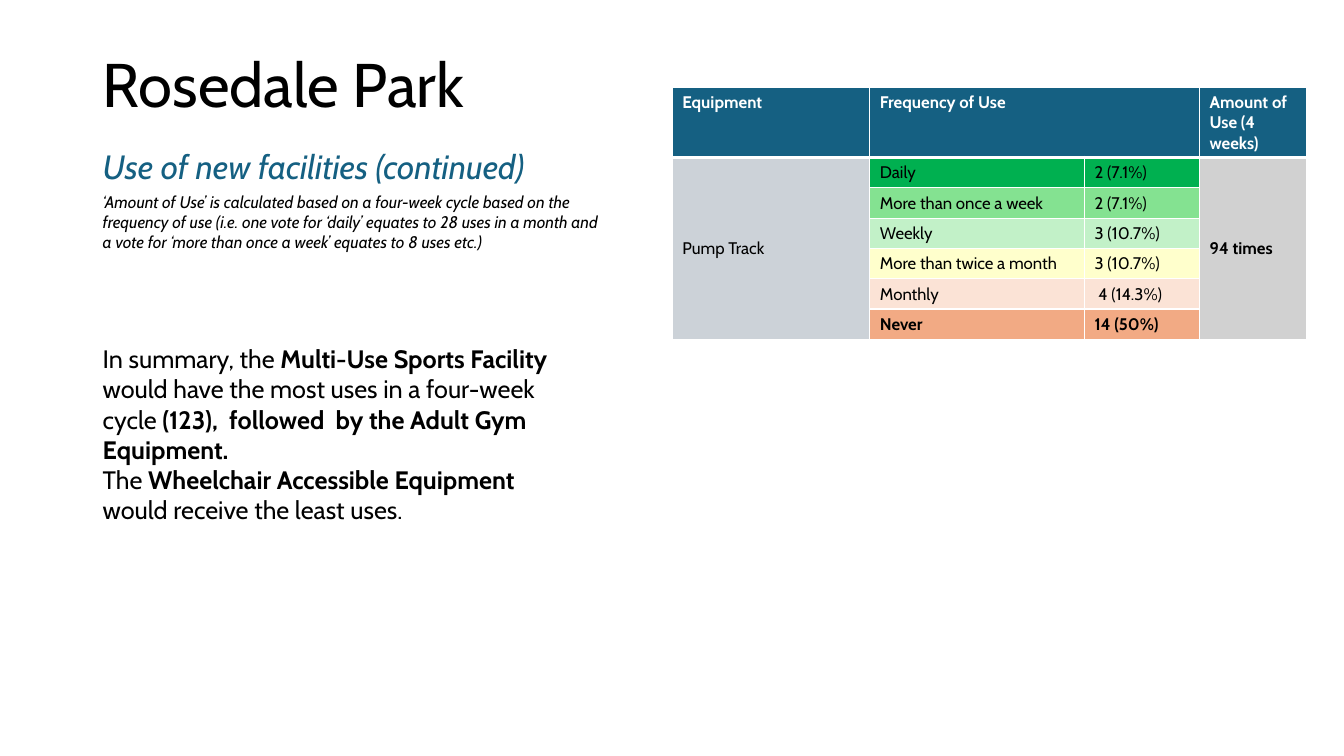
from lxml.etree import SubElement
from pptx import Presentation
from pptx.dml.color import RGBColor
from pptx.enum.text import MSO_ANCHOR
from pptx.oxml.ns import qn
from pptx.util import Cm, Pt

FONT = "Cabin"
BLACK = RGBColor(0x00, 0x00, 0x00)
WHITE = RGBColor(0xFF, 0xFF, 0xFF)
BLUE = RGBColor(0x15, 0x60, 0x82)
BLUE_GREY = RGBColor(0xCC, 0xD2, 0xD8)
GREY = RGBColor(0xD1, 0xD1, 0xD1)
GREEN = RGBColor(0x00, 0xB0, 0x50)
MID_GREEN = RGBColor(0x84, 0xE2, 0x91)
PALE_GREEN = RGBColor(0xC2, 0xF1, 0xC8)
YELLOW = RGBColor(0xFF, 0xFF, 0xCC)
PALE_ORANGE = RGBColor(0xFB, 0xE3, 0xD6)
ORANGE = RGBColor(0xF2, 0xAA, 0x84)

LEFT = 2.34
COLUMN_WIDTHS = (4.98, 5.41, 2.9, 2.69)
HEADER_HEIGHT = 1.78
ROW_HEIGHT = 0.76
HEADERS = ("Equipment", "Frequency of Use", "", "Amount of Use (4 weeks)")
FREQUENCIES = (
    ("Daily", "2 (7.1%)", GREEN),
    ("More than once a week", "2 (7.1%)", MID_GREEN),
    ("Weekly", "3 (10.7%)", PALE_GREEN),
    ("More than twice a month", "3 (10.7%)", YELLOW),
    ("Monthly", " 4 (14.3%)", PALE_ORANGE),
    ("Never", "14 (50%)", ORANGE),
)
SUMMARY = (
    (
        ("In summary, the ", False),
        ("Multi-Use Sports Facility ", True),
        ("would have the most uses in a four-week cycle ", False),
        ("(123),  followed  by the Adult Gym Equipment.", True),
    ),
    (
        ("The ", False),
        ("Wheelchair Accessible Equipment ", True),
        ("would receive the least uses.", False),
    ),
)


def style_paragraph(paragraph, size, color=BLACK, **emphasis):
    """Set the font of a whole paragraph."""
    font = paragraph.font
    font.name = FONT
    font.size = Pt(size)
    font.color.rgb = color
    for name, value in emphasis.items():
        setattr(font, name, value)


def add_text_frame(slide, top, width, height, anchor=MSO_ANCHOR.TOP):
    """Add a wrapping text box at the left margin and return its frame."""
    shape = slide.shapes.add_textbox(Cm(LEFT), Cm(top), Cm(width), Cm(height))
    shape.text_frame.word_wrap = True
    shape.text_frame.vertical_anchor = anchor
    return shape.text_frame


def add_line(slide, text, top, width, height, size, color=BLACK, italic=False):
    """Add a text box with one uniformly styled paragraph."""
    paragraph = add_text_frame(slide, top, width, height).paragraphs[0]
    paragraph.text = text
    style_paragraph(paragraph, size, color, italic=italic)


def add_title(slide, text):
    """Add the vertically centred slide title."""
    frame = add_text_frame(slide, 0.36, 29.21, 3.68, MSO_ANCHOR.MIDDLE)
    paragraph = frame.paragraphs[0]
    paragraph.text = text
    paragraph.line_spacing = 0.9
    style_paragraph(paragraph, 44)


def add_summary(slide):
    """Add the summary, whose key phrases are bold."""
    frame = add_text_frame(slide, 8.53, 12.55, 4.88)
    for index, pieces in enumerate(SUMMARY):
        paragraph = frame.add_paragraph() if index else frame.paragraphs[0]
        style_paragraph(paragraph, 18)
        for text, bold in pieces:
            run = paragraph.add_run()
            run.text = text
            run.font.bold = bold


def set_borders(cell, top, bottom):
    """Draw white borders with the given top and bottom widths in points."""
    properties = cell._tc.get_or_add_tcPr()
    for tag, width in (("lnL", 1), ("lnR", 1), ("lnT", top), ("lnB", bottom)):
        line = SubElement(properties, qn(f"a:{tag}"), w=str(Pt(width)))
        fill = SubElement(line, qn("a:solidFill"))
        SubElement(fill, qn("a:srgbClr"), val=str(WHITE))


def fill_cell(table, row, column, text, fill, color=BLACK, bold=False):
    """Write, style and colour one table cell."""
    cell = table.cell(row, column)
    set_borders(cell, 3 if row == 1 else 1, 3 if row == 0 else 1)
    cell.fill.solid()
    cell.fill.fore_color.rgb = fill
    paragraph = cell.text_frame.paragraphs[0]
    paragraph.text = text
    style_paragraph(paragraph, 12, color, bold=bold)


def add_usage_table(slide):
    """Add the table of how often the pump track would be used."""
    last_row = len(FREQUENCIES)
    table = slide.shapes.add_table(
        last_row + 1, len(COLUMN_WIDTHS), Cm(16.94), Cm(2.19),
        Cm(sum(COLUMN_WIDTHS)), Cm(HEADER_HEIGHT + last_row * ROW_HEIGHT),
    ).table
    for column, width in zip(table.columns, COLUMN_WIDTHS):
        column.width = Cm(width)
    for index, row in enumerate(table.rows):
        row.height = Cm(ROW_HEIGHT if index else HEADER_HEIGHT)
    for column, text in enumerate(HEADERS):
        fill_cell(table, 0, column, text, BLUE, WHITE, True)
    for row, (label, votes, fill) in enumerate(FREQUENCIES, 1):
        bold = row == last_row
        fill_cell(table, row, 0, "Pump Track" if row == 1 else "", BLUE_GREY)
        fill_cell(table, row, 1, label, fill, bold=bold)
        fill_cell(table, row, 2, votes, fill, bold=bold)
        fill_cell(table, row, 3, "94 times" if row == 1 else "", GREY, bold=True)
    table.cell(0, 1).merge(table.cell(0, 2))
    for column in (0, 3):
        table.cell(1, column).merge(table.cell(last_row, column))
        table.cell(1, column).vertical_anchor = MSO_ANCHOR.MIDDLE


def main():
    """Build and save the Rosedale Park slide."""
    presentation = Presentation()
    presentation.slide_width = Cm(33.87)
    presentation.slide_height = Cm(19.05)
    slide = presentation.slides.add_slide(presentation.slide_layouts[6])
    add_title(slide, "Rosedale Park")
    add_line(slide, "Use of new facilities (continued)",
             3.56, 13.92, 1.28, 24, BLUE, italic=True)
    add_line(slide, "‘Amount of Use’ is calculated based on a four-week cycle "
             "based on the frequency of use (i.e. one vote for ‘daily’ equates "
             "to 28 uses in a month and a vote for ‘more than once a week’ "
             "equates to 8 uses etc.)", 4.7, 13.26, 1.8, 12, italic=True)
    add_usage_table(slide)
    add_summary(slide)
    presentation.save("out.pptx")


if __name__ == "__main__":
    main()
